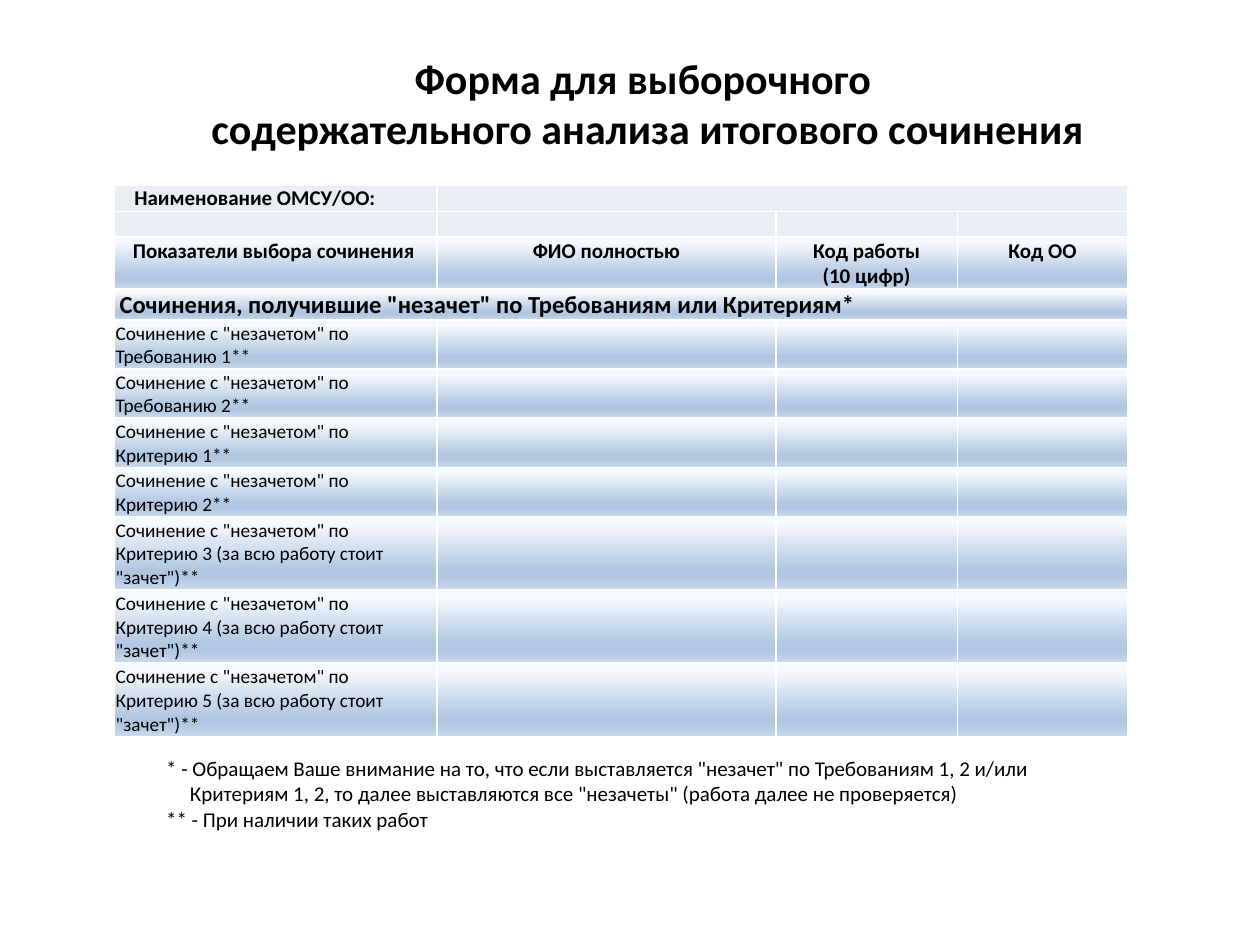
"""Build a slide with the form for selective analysis of the final essay."""
import dataclasses

import lxml.etree
import pptx
import pptx.dml.color
import pptx.enum.text
import pptx.oxml.ns
import pptx.util

Cm = pptx.util.Cm
Pt = pptx.util.Pt
qn = pptx.oxml.ns.qn
PP_ALIGN = pptx.enum.text.PP_ALIGN
MSO_ANCHOR = pptx.enum.text.MSO_ANCHOR


@dataclasses.dataclass(frozen=True)
class Theme:
    font: str = "Calibri"
    text: str = "000000"
    plain: str = "E9EDF4"
    gradient: tuple = ((10, "F6F9FC"), (74, "B0C6E1"), (83, "B0C6E1"), (100, "CAD9EB"))
    title: int = 24
    section: int = 14
    label: int = 12
    body: int = 11


theme = Theme()


def style(paragraph, size, bold=False, alignment=PP_ALIGN.LEFT):
    paragraph.alignment = alignment
    paragraph.font.name = theme.font
    paragraph.font.size = Pt(size)
    paragraph.font.bold = bold
    paragraph.font.color.rgb = pptx.dml.color.RGBColor.from_string(theme.text)


def fill_gradient(cell):
    properties = cell._tc.get_or_add_tcPr()
    gradient = lxml.etree.SubElement(properties, qn("a:gradFill"), rotWithShape="1")
    stops = lxml.etree.SubElement(gradient, qn("a:gsLst"))
    for position, color in theme.gradient:
        stop = lxml.etree.SubElement(stops, qn("a:gs"), pos=str(position * 1000))
        lxml.etree.SubElement(stop, qn("a:srgbClr"), val=color)
    lxml.etree.SubElement(gradient, qn("a:lin"), ang="5400000", scaled="0")


presentation = pptx.Presentation()
presentation.slide_width = Cm(25.4)
presentation.slide_height = Cm(19.05)
slide = presentation.slides.add_slide(presentation.slide_layouts[6])

title = slide.shapes.add_textbox(Cm(1.98), Cm(0.76), Cm(22.15), Cm(2.62)).text_frame
title.word_wrap = True
title.vertical_anchor = MSO_ANCHOR.MIDDLE
title.text = "Форма для выборочного \vсодержательного анализа итогового сочинения"
style(title.paragraphs[0], theme.title, True, PP_ALIGN.CENTER)

criteria = ["Требованию 1", "Требованию 2", "Критерию 1", "Критерию 2"]
criteria += [f'Критерию {number} (за всю работу стоит "зачет")' for number in (3, 4, 5)]
rows = [
    ["Наименование ОМСУ/ОО:"],
    [],
    ["Показатели выбора сочинения", "ФИО полностью", "Код работы\n(10 цифр)", "Код ОО"],
    ['Сочинения, получившие "незачет" по Требованиям или Критериям*'],
]
rows += [[f'Сочинение с "незачетом" по {criterion}**'] for criterion in criteria]
column_widths = [6.5, 6.83, 3.66, 3.43]
row_heights = [0.53, 0.52, 1.05, 0.62] + [0.99] * 4 + [1.48] * 3
row_sizes = [theme.label] * 3 + [theme.section] + [theme.body] * len(criteria)
NAME_ROW, EMPTY_ROW, HEADER_ROW, SECTION_ROW = range(4)

table = slide.shapes.add_table(
    len(rows), len(column_widths), Cm(2.31), Cm(3.73), Cm(sum(column_widths)), Cm(sum(row_heights))
).table
table.first_row = False
table.horz_banding = False
for column, width in zip(table.columns, column_widths):
    column.width = Cm(width)
for row, height in zip(table.rows, row_heights):
    row.height = Cm(height)

for row_index, texts in enumerate(rows):
    is_header = row_index == HEADER_ROW
    for column_index in range(len(column_widths)):
        cell = table.cell(row_index, column_index)
        cell.margin_left = cell.margin_top = Cm(0.02)
        cell.margin_right = Cm(0.1 if column_index == 0 else 0.02)
        cell.margin_bottom = 0
        cell.vertical_anchor = MSO_ANCHOR.TOP if is_header else MSO_ANCHOR.BOTTOM
        if row_index <= EMPTY_ROW:
            cell.fill.solid()
            cell.fill.fore_color.rgb = pptx.dml.color.RGBColor.from_string(theme.plain)
        else:
            fill_gradient(cell)
        has_text = column_index < len(texts)
        if has_text:
            cell.text = texts[column_index]
        for paragraph in cell.text_frame.paragraphs:
            style(
                paragraph,
                row_sizes[row_index] if has_text else theme.body,
                row_index <= SECTION_ROW,
                PP_ALIGN.CENTER if is_header else PP_ALIGN.LEFT,
            )

table.cell(NAME_ROW, 0).margin_left = Cm(0.4)
table.cell(SECTION_ROW, 0).margin_left = Cm(0.1)
table.cell(NAME_ROW, 1).merge(table.cell(NAME_ROW, 3))
table.cell(SECTION_ROW, 0).merge(table.cell(SECTION_ROW, 3))

footnotes = slide.shapes.add_textbox(Cm(3.1), Cm(15.11), Cm(18.39), Cm(1.8)).text_frame
footnotes.word_wrap = True
footnotes.text = (
    '* - Обращаем Ваше внимание на то, что если выставляется "незачет" по Требованиям 1, 2 и/или '
    'Критериям 1, 2, то далее выставляются все "незачеты" (работа далее не проверяется)\n'
    "** - При наличии таких работ"
)
for paragraph in footnotes.paragraphs:
    properties = paragraph._p.get_or_add_pPr()
    properties.set("marL", str(Cm(0.48)))
    properties.set("indent", str(-Cm(0.48)))
    style(paragraph, theme.label)

presentation.save("out.pptx")
